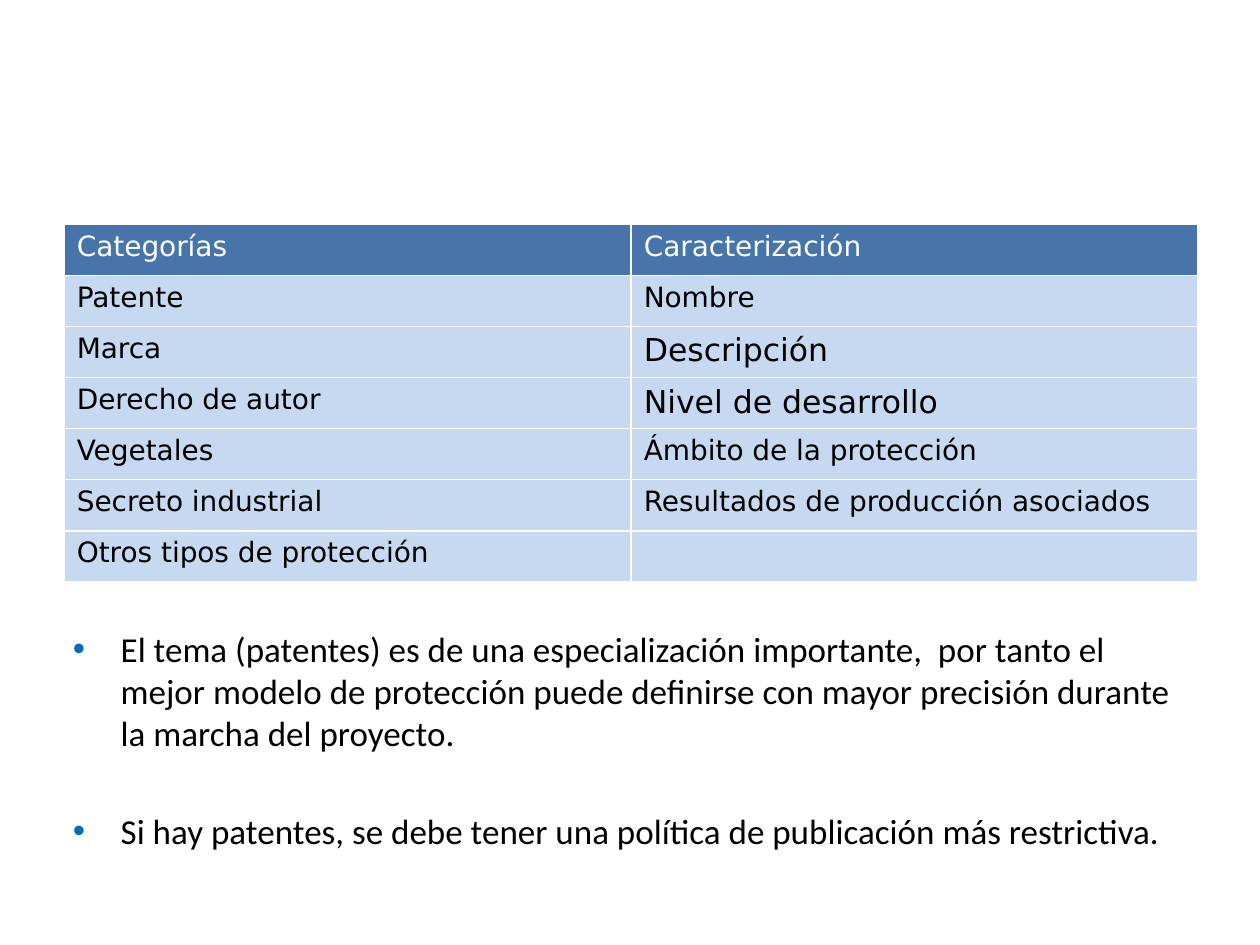
from typing import NamedTuple

from lxml.etree import SubElement
from pptx import Presentation
from pptx.dml.color import RGBColor
from pptx.oxml.ns import qn
from pptx.util import Inches, Pt

WHITE = RGBColor(0xFF, 0xFF, 0xFF)
BLACK = RGBColor(0, 0, 0)
HEADER_BLUE = RGBColor(0x47, 0x74, 0xAB)
ROW_BLUE = RGBColor(0xC6, 0xD9, 0xF1)
BULLET_BLUE = RGBColor(0x00, 0x6C, 0xB7)


class Entry(NamedTuple):
    text: str
    size: int = 16


ROWS = [
    (Entry("Categorías"), Entry("Caracterización")),
    (Entry("Patente"), Entry("Nombre")),
    (Entry("Marca"), Entry("Descripción", 18)),
    (Entry("Derecho de autor"), Entry("Nivel de desarrollo", 18)),
    (Entry("Vegetales"), Entry("Ámbito de la protección")),
    (Entry("Secreto industrial"), Entry("Resultados de producción asociados")),
    (Entry("Otros tipos de protección"), Entry("")),
]
NOTES = [
    "El tema (patentes) es de una especialización importante,  por tanto el mejor "
    "modelo de protección puede definirse con mayor precisión durante la marcha "
    "del proyecto.",
    "Si hay patentes, se debe tener una política de publicación más restrictiva.",
]


def add_solid_fill(parent, color: RGBColor) -> None:
    fill = SubElement(parent, qn("a:solidFill"))
    SubElement(fill, qn("a:srgbClr"), val=str(color))


def set_font(paragraph, name: str, size: int, color: RGBColor) -> None:
    font = paragraph.font
    font.name = name
    font.size = Pt(size)
    font.bold = False
    font.color.rgb = color


def fill_cell(cell, entry: Entry, fill: RGBColor, color: RGBColor) -> None:
    properties = cell._tc.get_or_add_tcPr()
    for side in ("lnL", "lnR", "lnT", "lnB"):
        add_solid_fill(SubElement(properties, qn(f"a:{side}"), w=str(Pt(1))), WHITE)
    cell.fill.solid()
    cell.fill.fore_color.rgb = fill
    if entry.text:
        cell.text = entry.text
        set_font(cell.text_frame.paragraphs[0], "DejaVu Sans", entry.size, color)


def add_category_table(slide) -> None:
    table = slide.shapes.add_table(
        len(ROWS), 2, Inches(0.51), Inches(1.78), Inches(9), Inches(2.84)
    ).table
    table.first_row = table.horz_banding = False
    for row, entries in enumerate(ROWS):
        fill, color = (ROW_BLUE, BLACK) if row else (HEADER_BLUE, WHITE)
        for column, entry in enumerate(entries):
            fill_cell(table.cell(row, column), entry, fill, color)


def add_bullet(paragraph) -> None:
    properties = paragraph._p.get_or_add_pPr()
    properties.set("marL", str(Inches(0.38)))
    properties.set("indent", str(Inches(-0.38)))
    bullet_color = SubElement(properties, qn("a:buClr"))
    SubElement(bullet_color, qn("a:srgbClr"), val=str(BULLET_BLUE))
    SubElement(properties, qn("a:buFont"), typeface="Arial")
    SubElement(properties, qn("a:buChar"), char="•")


def add_notes(slide) -> None:
    frame = slide.shapes.add_textbox(
        Inches(0.48), Inches(4.93), Inches(9.06), Inches(1.92)
    ).text_frame
    frame.word_wrap = True
    for index, note in enumerate(NOTES):
        paragraph = frame.add_paragraph() if index else frame.paragraphs[0]
        paragraph.text = note
        add_bullet(paragraph)
        if index:
            paragraph.space_before = Pt(32)
        set_font(paragraph, "Calibri", 20, BLACK)


def main() -> None:
    presentation = Presentation()
    presentation.slide_width = Inches(10)
    presentation.slide_height = Inches(7.5)
    slide = presentation.slides.add_slide(presentation.slide_layouts[6])
    add_category_table(slide)
    add_notes(slide)
    presentation.save("out.pptx")


if __name__ == "__main__":
    main()
